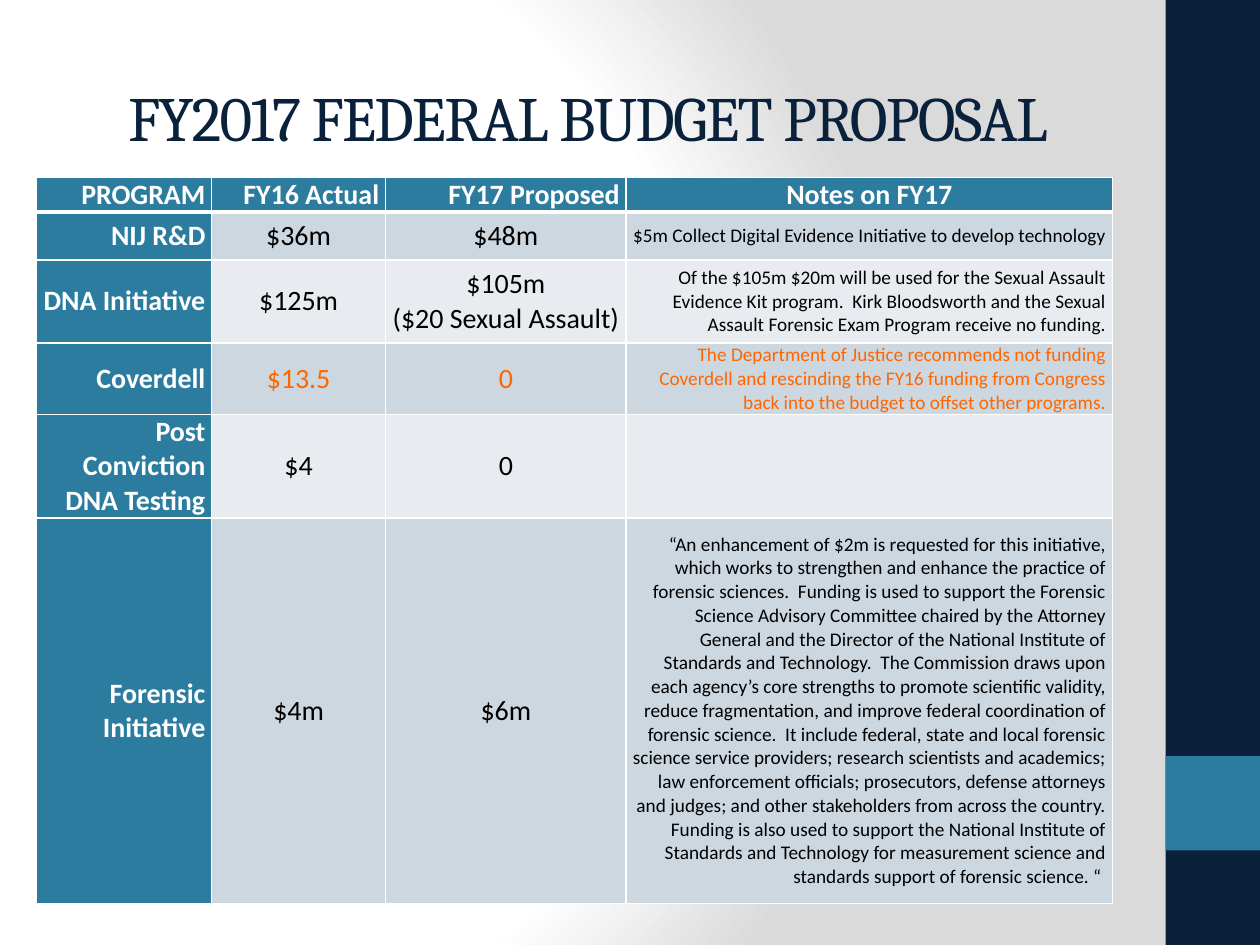
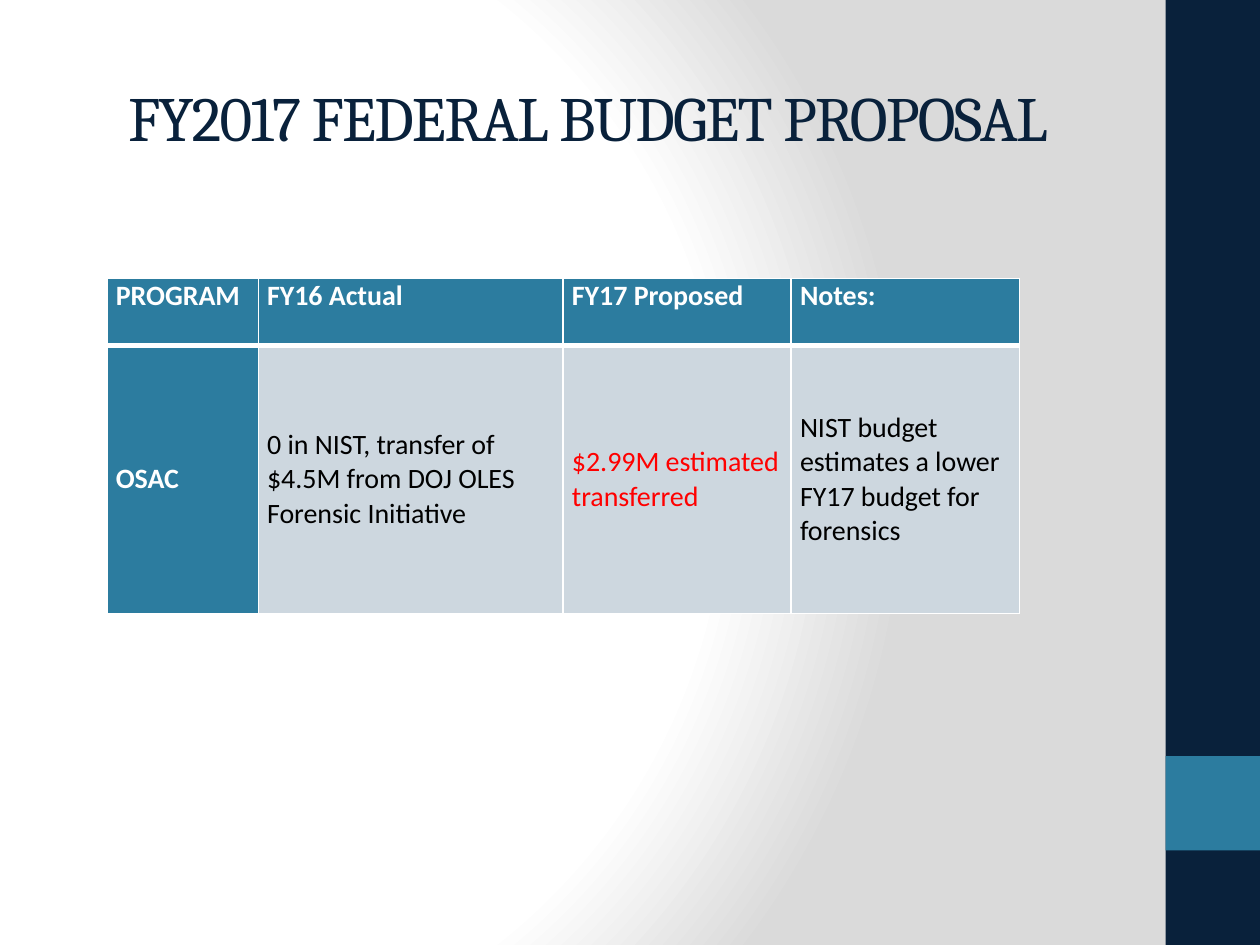
from dataclasses import dataclass

from pptx import Presentation
from pptx.dml.color import RGBColor
from pptx.enum.shapes import MSO_SHAPE
from pptx.enum.text import MSO_ANCHOR, MSO_AUTO_SIZE, PP_ALIGN
from pptx.oxml import parse_xml
from pptx.oxml.ns import nsdecls, qn
from pptx.util import Inches, Pt

RECTANGLE = MSO_SHAPE.RECTANGLE
LEFT, CENTER, RIGHT = PP_ALIGN.LEFT, PP_ALIGN.CENTER, PP_ALIGN.RIGHT
TOP, MIDDLE = MSO_ANCHOR.TOP, MSO_ANCHOR.MIDDLE
NO_AUTOFIT = MSO_AUTO_SIZE.NONE
TITLE_ONLY = 5


@dataclass(frozen=True)
class Theme:
    navy: str = "09213B"
    teal: str = "2C7C9F"
    white: str = "FFFFFF"
    grey: str = "DADADA"
    black: str = "000000"
    orange: str = "FF6600"
    red: str = "FF0000"
    bands: tuple = ("CDD7DF", "E8ECF0")
    title_font: str = "Cambria"
    body_font: str = "Calibri"
    title_size: int = 36
    table_size: int = 16
    note_size: int = 11
    thin_border: int = 1
    thick_border: int = 3


class BudgetDeck:
    def __init__(self, theme):
        self.theme = theme
        self.deck = Presentation()
        self.deck.slide_width = Inches(10)
        self.deck.slide_height = Inches(7.5)
        self.page = None
        self.set_background()

    def set_background(self):
        master = self.deck.slide_master
        master.background.fill.solid()
        properties = master.element.find(".//" + qn("p:bgPr"))
        stops = ((0, self.theme.white), (75, self.theme.white), (100, self.theme.grey))
        stop_list = "".join(
            f'<a:gs pos="{position * 1000}"><a:srgbClr val="{color}"/></a:gs>'
            for position, color in stops
        )
        properties.replace(properties[0], parse_xml(
            f'<a:gradFill {nsdecls("a")} rotWithShape="1"><a:gsLst>{stop_list}</a:gsLst>'
            '<a:path path="circle"><a:fillToRect l="20000" t="50000" r="100000" b="50000"/>'
            "</a:path></a:gradFill>"
        ))

    def add_page(self, title):
        self.page = self.deck.slides.add_slide(self.deck.slide_layouts[TITLE_ONLY])
        self.add_band(0, 7.5, self.theme.navy)
        self.add_band(6, 0.75, self.theme.teal)
        self.add_title(title)

    def add_band(self, top, height, color):
        band = self.page.shapes.add_shape(
            RECTANGLE, Inches(9.25), Inches(top), Inches(0.75), Inches(height)
        )
        band.shadow.inherit = False
        band.fill.solid()
        band.fill.fore_color.rgb = RGBColor.from_string(color)
        band.line.fill.background()

    def add_title(self, text):
        box = self.page.shapes.title
        box.left, box.top = Inches(0.5), Inches(0.3)
        box.width, box.height = Inches(8.33), Inches(1.25)
        frame = box.text_frame
        frame.auto_size = NO_AUTOFIT
        frame.vertical_anchor = MIDDLE
        para = frame.paragraphs[0]
        para.alignment = CENTER
        span = self.add_span(
            para, text, self.theme.title_size, self.theme.navy, self.theme.title_font
        )
        span.font._element.set("spc", "-100")

    def add_span(self, para, text, size, color, font, bold=False):
        span = para.add_run()
        span.text = text
        span.font.name = font
        span.font.size = Pt(size)
        span.font.bold = bold
        span.font.color.rgb = RGBColor.from_string(color)
        return span

    def add_table(self, left, top, widths, heights, rows, margin,
                  header_alignments, body_alignments, note_size, accents):
        theme = self.theme
        table = self.page.shapes.add_table(
            len(rows), len(widths), Inches(left), Inches(top),
            Inches(sum(widths)), Inches(sum(heights))
        ).table
        table.first_col = True
        table.horz_banding = False
        for column, width in zip(table.columns, widths):
            column.width = Inches(width)
        for row, height in zip(table.rows, heights):
            row.height = Inches(height)
        for row_index, row in enumerate(rows):
            is_header = row_index == 0
            alignments = header_alignments if is_header else body_alignments
            for column_index, text in enumerate(row):
                is_label = is_header or column_index == 0
                is_note = not is_header and column_index == len(row) - 1
                cell = table.cell(row_index, column_index)
                cell.margin_left = cell.margin_right = Inches(margin)
                cell.margin_top = cell.margin_bottom = 0
                cell.vertical_anchor = TOP if is_header else MIDDLE
                fill = theme.teal if is_label else theme.bands[(row_index - 1) % 2]
                cell.fill.solid()
                cell.fill.fore_color.rgb = RGBColor.from_string(fill)
                self.add_borders(cell, row_index)
                color = theme.white if is_label else accents.get(
                    (row_index, column_index), theme.black
                )
                size = note_size if is_note else theme.table_size
                self.fill_cell(cell, text, alignments[column_index], size, color, is_label)

    def fill_cell(self, cell, text, alignment, size, color, bold):
        frame = cell.text_frame
        for index, line in enumerate(text.split("\n")):
            para = frame.add_paragraph() if index else frame.paragraphs[0]
            para.alignment = alignment
            if line:
                self.add_span(para, line, size, color, self.theme.body_font, bold)

    def add_borders(self, cell, row_index):
        thin, thick = self.theme.thin_border, self.theme.thick_border
        widths = {
            "lnL": thin,
            "lnR": thin,
            "lnT": thick if row_index == 1 else thin,
            "lnB": thick if row_index == 0 else thin,
        }
        properties = cell._tc.get_or_add_tcPr()
        for index, (side, width) in enumerate(widths.items()):
            properties.insert(index, parse_xml(
                f'<a:{side} {nsdecls("a")} w="{Pt(width)}"><a:solidFill>'
                f'<a:srgbClr val="{self.theme.white}"/></a:solidFill></a:{side}>'
            ))

    def save(self):
        self.deck.save("out.pptx")


TITLE = "FY2017 FEDERAL BUDGET PROPOSAL"

FORENSIC_SENTENCES = (
    "“An enhancement of $2m is requested for this initiative, which works to "
    "strengthen and enhance the practice of forensic sciences.",
    "Funding is used to support the Forensic Science Advisory Committee chaired by "
    "the Attorney General and the Director of the National Institute of Standards "
    "and Technology.",
    "The Commission draws upon each agency’s core strengths to promote scientific "
    "validity, reduce fragmentation, and improve federal coordination of forensic "
    "science.",
    "It include federal, state and local forensic science service providers; "
    "research scientists and academics; law enforcement officials; prosecutors, "
    "defense attorneys and judges; and other stakeholders from across the country.",
    "Funding is also used to support the National Institute of Standards and "
    "Technology for measurement science and standards support of forensic science. “ ",
)

PROGRAM_ROWS = (
    ("PROGRAM", "FY16 Actual", "FY17 Proposed", "Notes on FY17"),
    ("NIJ R&D", "$36m", "$48m",
     "$5m Collect Digital Evidence Initiative to develop technology"),
    ("DNA Initiative", "$125m", "$105m\n($20 Sexual Assault)",
     "Of the $105m $20m will be used for the Sexual Assault Evidence Kit program.  "
     "Kirk Bloodsworth and the Sexual Assault Forensic Exam Program receive no funding."),
    ("Coverdell", "$13.5", "0",
     "The Department of Justice recommends not funding Coverdell and rescinding the "
     "FY16 funding from Congress back into the budget to offset other programs."),
    ("Post Conviction DNA Testing", "$4", "0", ""),
    ("Forensic Initiative", "$4m", "$6m", "  ".join(FORENSIC_SENTENCES)),
)

OSAC_ROWS = (
    ("PROGRAM", "FY16 Actual", "FY17 Proposed", "Notes:"),
    ("OSAC", "0 in NIST, transfer of $4.5M from DOJ OLES Forensic Initiative",
     "$2.99M estimated transferred",
     "NIST budget estimates a lower FY17 budget for forensics"),
)


def main():
    theme = Theme()
    budget = BudgetDeck(theme)

    budget.add_page(TITLE)
    budget.add_table(
        0.29, 1.41, (1.39, 1.38, 1.91, 3.86), (0.27, 0.38, 0.66, 0.57, 0.82, 3.06),
        PROGRAM_ROWS, margin=0.05,
        header_alignments=(RIGHT, RIGHT, RIGHT, CENTER),
        body_alignments=(RIGHT, CENTER, CENTER, RIGHT),
        note_size=theme.note_size,
        accents={(3, column): theme.orange for column in (1, 2, 3)},
    )

    budget.add_page(TITLE)
    budget.add_table(
        0.85, 2.21, (1.2, 2.42, 1.81, 1.81), (0.53, 2.13),
        OSAC_ROWS, margin=0.07,
        header_alignments=(LEFT,) * 4,
        body_alignments=(LEFT,) * 4,
        note_size=theme.table_size,
        accents={(1, 2): theme.red},
    )

    budget.save()


if __name__ == "__main__":
    main()
